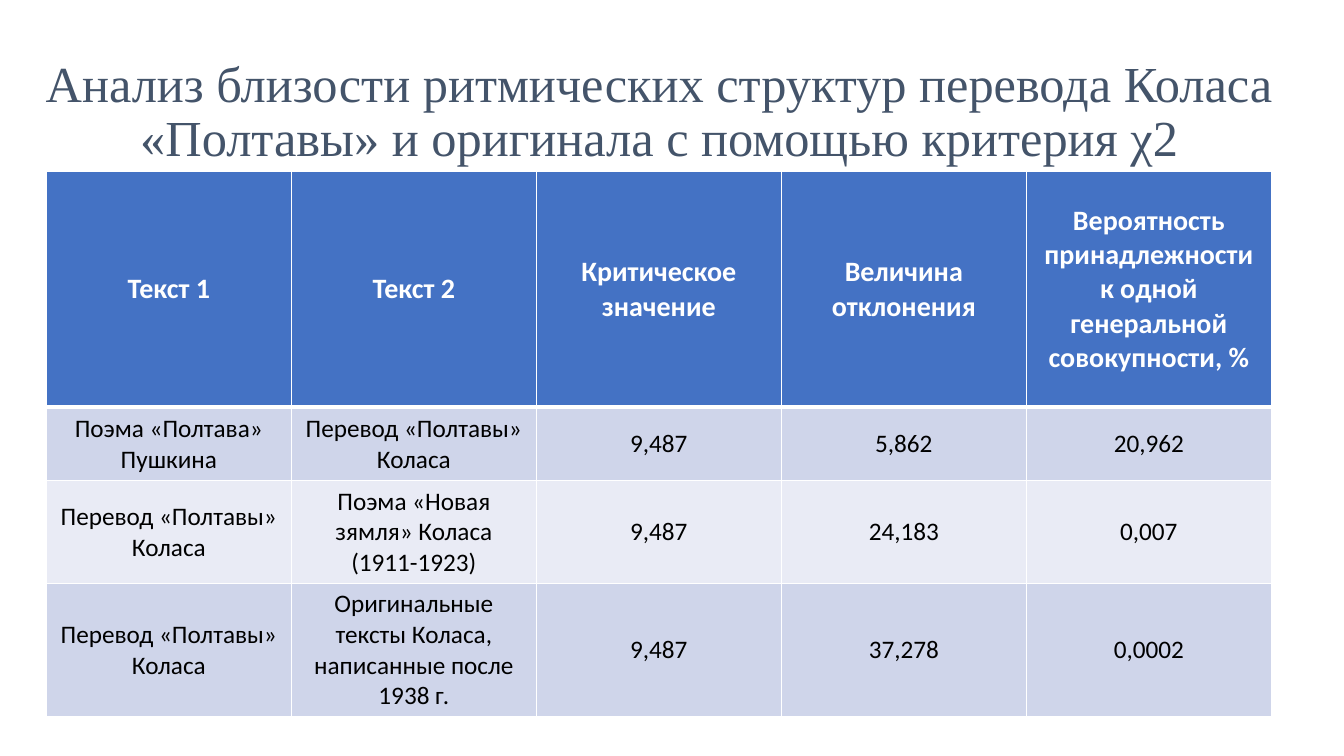
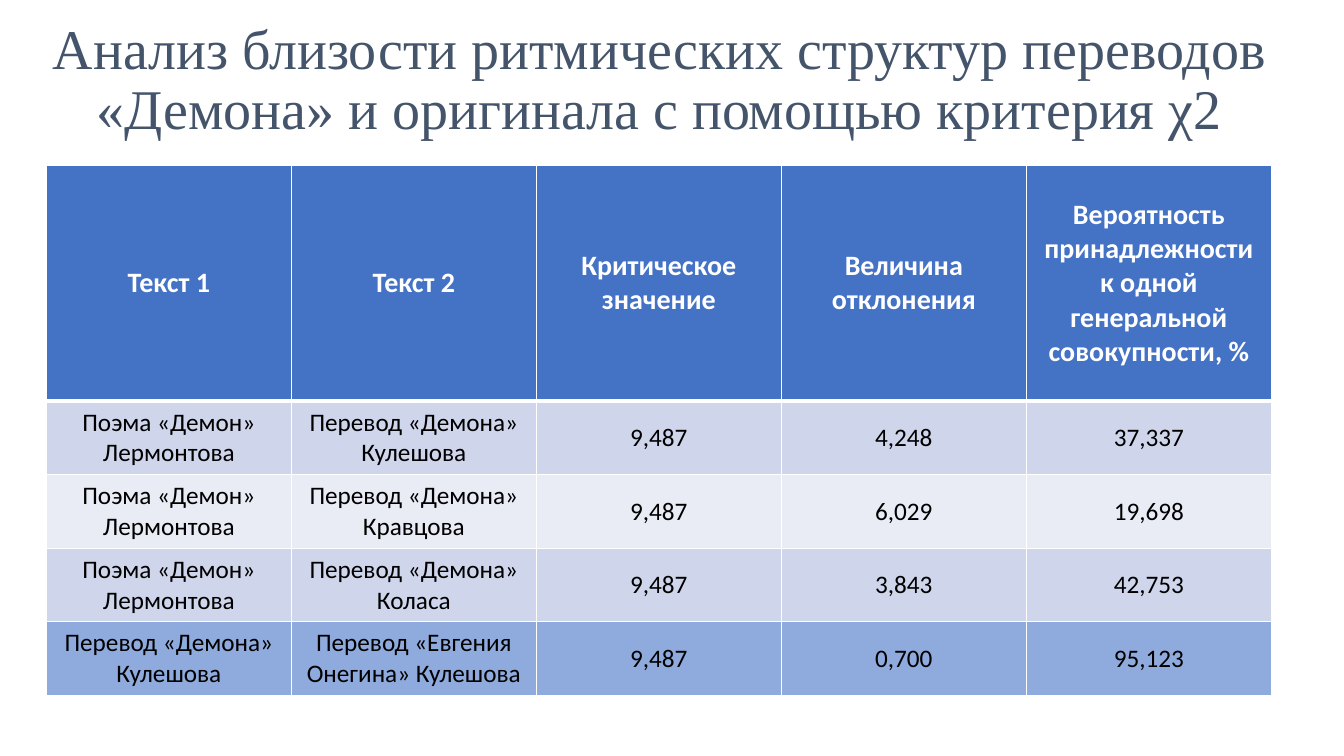
"""Build two slides that compare rhythmic structures with the χ2 criterion."""
from lxml import etree
from pptx import Presentation
from pptx.dml.color import RGBColor
from pptx.enum.text import MSO_ANCHOR, PP_ALIGN
from pptx.oxml.ns import qn
from pptx.util import Inches, Pt

CENTER = PP_ALIGN.CENTER
MIDDLE = MSO_ANCHOR.MIDDLE

SLATE = RGBColor(0x44, 0x54, 0x6A)
BLUE = RGBColor(0x44, 0x72, 0xC4)
BAND_DARK = RGBColor(0xCF, 0xD5, 0xEA)
BAND_LIGHT = RGBColor(0xE9, 0xEB, 0xF5)
HIGHLIGHT = RGBColor(0x8F, 0xAA, 0xDC)
WHITE = RGBColor(0xFF, 0xFF, 0xFF)
BLACK = RGBColor(0x00, 0x00, 0x00)

HEADINGS = (
    "Текст 1",
    "Текст 2",
    "Критическое значение",
    "Величина отклонения",
    "Вероятность принадлежности к одной генеральной совокупности, %",
)
SLIDES = (
    {
        "title": "Анализ близости ритмических структур перевода Коласа "
                 "«Полтавы» и оригинала с помощью критерия χ2",
        "title_size": 36,
        "title_top": 0.4,
        "table_top": 1.7,
        "row_heights": (0.73, 1.02, 1.32),
        "row_fills": (BAND_DARK, BAND_LIGHT, BAND_DARK),
        "rows": (
            ("Поэма «Полтава» Пушкина", "Перевод «Полтавы» Коласа",
             "9,487", "5,862", "20,962"),
            ("Перевод «Полтавы» Коласа", "Поэма «Новая зямля» Коласа (1911-1923)",
             "9,487", "24,183", "0,007"),
            ("Перевод «Полтавы» Коласа",
             "Оригинальные тексты Коласа, написанные после 1938 г.",
             "9,487", "37,278", "0,0002"),
        ),
    },
    {
        "title": "Анализ близости ритмических структур переводов "
                 "«Демона» и оригинала с помощью критерия χ2",
        "title_size": 40,
        "title_top": 0.08,
        "table_top": 1.64,
        "row_heights": (0.73,) * 4,
        "row_fills": (BAND_DARK, BAND_LIGHT, BAND_DARK, HIGHLIGHT),
        "rows": (
            ("Поэма «Демон» Лермонтова", "Перевод «Демона» Кулешова",
             "9,487", "4,248", "37,337"),
            ("Поэма «Демон» Лермонтова", "Перевод «Демона» Кравцова",
             "9,487", "6,029", "19,698"),
            ("Поэма «Демон» Лермонтова", "Перевод «Демона» Коласа",
             "9,487", "3,843", "42,753"),
            ("Перевод «Демона» Кулешова", "Перевод «Евгения Онегина» Кулешова",
             "9,487", "0,700", "95,123"),
        ),
    },
)

TITLE_LEFT, TITLE_WIDTH, TITLE_HEIGHT = 0.19, 12.7, 1.45
TABLE_LEFT, TABLE_WIDTH = 0.46, 12.15
HEADER_HEIGHT = 2.34
THIN, THICK = 1, 3


def write_text(frame, text, *, size, color, font="Calibri", bold=False, line_spacing=1.0):
    paragraph = frame.paragraphs[0]
    paragraph.alignment = CENTER
    paragraph.line_spacing = line_spacing
    run = paragraph.add_run()
    run.text = text
    run.font.name = font
    run.font.size = Pt(size)
    run.font.bold = bold
    run.font.color.rgb = color


def set_borders(cell, top, bottom):
    properties = cell._tc.get_or_add_tcPr()
    widths = {"a:lnL": THIN, "a:lnR": THIN, "a:lnT": top, "a:lnB": bottom}
    for position, (tag, width) in enumerate(widths.items()):
        line = etree.Element(qn(tag), w=str(Pt(width)))
        fill = etree.SubElement(line, qn("a:solidFill"))
        etree.SubElement(fill, qn("a:srgbClr"), val=str(WHITE))
        properties.insert(position, line)


def add_title(slide, text, size, top):
    box = slide.shapes.add_textbox(
        Inches(TITLE_LEFT), Inches(top), Inches(TITLE_WIDTH), Inches(TITLE_HEIGHT))
    box.text_frame.word_wrap = True
    box.text_frame.vertical_anchor = MIDDLE
    write_text(box.text_frame, text, size=size, color=SLATE,
               font="Times New Roman", line_spacing=0.9)


def add_results_table(slide, content):
    rows = (HEADINGS, *content["rows"])
    heights = (HEADER_HEIGHT, *content["row_heights"])
    fills = (BLUE, *content["row_fills"])
    table = slide.shapes.add_table(
        len(rows), len(HEADINGS), Inches(TABLE_LEFT), Inches(content["table_top"]),
        Inches(TABLE_WIDTH), Inches(sum(heights))).table
    for column in table.columns:
        column.width = Inches(TABLE_WIDTH / len(HEADINGS))
    for row_index, (texts, height, fill) in enumerate(zip(rows, heights, fills)):
        table.rows[row_index].height = Inches(height)
        is_header = row_index == 0
        for column_index, text in enumerate(texts):
            cell = table.cell(row_index, column_index)
            cell.vertical_anchor = MIDDLE
            cell.fill.solid()
            cell.fill.fore_color.rgb = fill
            set_borders(cell, top=THICK if row_index == 1 else THIN,
                        bottom=THICK if is_header else THIN)
            write_text(cell.text_frame, text, size=20 if is_header else 18,
                       color=WHITE if is_header else BLACK, bold=is_header)


def main():
    presentation = Presentation()
    presentation.slide_width = Inches(13.33)
    presentation.slide_height = Inches(7.5)
    for content in SLIDES:
        slide = presentation.slides.add_slide(presentation.slide_layouts[6])
        add_title(slide, content["title"], content["title_size"], content["title_top"])
        add_results_table(slide, content)
    presentation.save("out.pptx")


if __name__ == "__main__":
    main()
